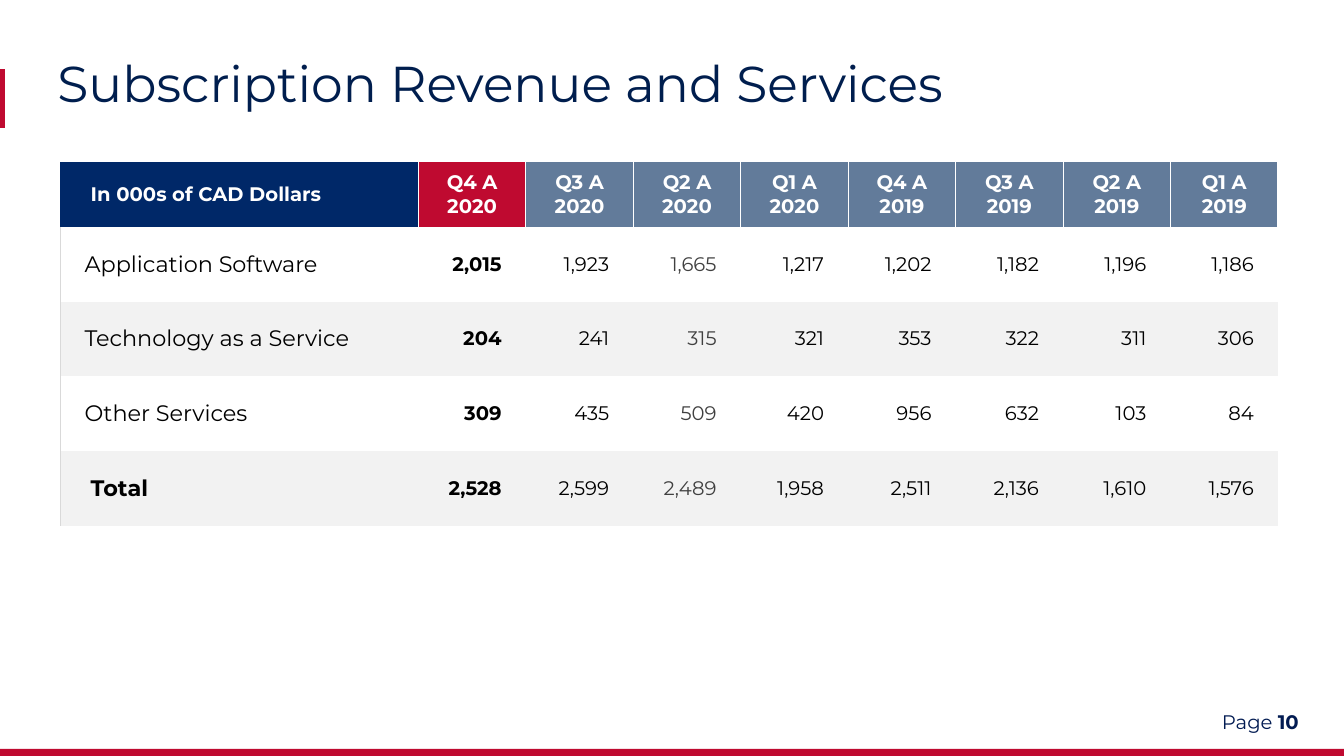
from lxml.etree import SubElement
from pptx import Presentation
from pptx.dml.color import RGBColor
from pptx.enum.shapes import MSO_CONNECTOR, MSO_SHAPE
from pptx.enum.text import MSO_ANCHOR, PP_ALIGN
from pptx.oxml.ns import qn
from pptx.util import Inches, Pt

NAVY, RED, SLATE = "002868", "BF0A30", "627B9A"
WHITE, BLACK, GRAY = "FFFFFF", "000000", "404040"
BAND, EDGE = "F2F2F2", "D9D9D9"
NO_GRID_STYLE = "{2D5ABB26-0587-4C30-8999-92F81FD0307C}"

QUARTERS = [(f"Q{quarter} A", str(year)) for year in (2020, 2019) for quarter in (4, 3, 2, 1)]
REVENUE = [
    ("Application Software", "2,015 1,923 1,665 1,217 1,202 1,182 1,196 1,186"),
    ("Technology as a Service", "204 241 315 321 353 322 311 306"),
    ("Other Services", "309 435 509 420 956 632 103 84"),
    ("Total", "2,528 2,599 2,489 1,958 2,511 2,136 1,610 1,576"),
]


def rgb(color):
    return RGBColor.from_string(color)


class SlideBuilder:
    font = "Montserrat"

    def __init__(self, slide):
        self.slide = slide

    def add_run(self, paragraph, text, size, color, bold=False):
        run = paragraph.add_run()
        run.text = text
        run.font.name = self.font
        run.font.size = Pt(size)
        run.font.bold = bold
        run.font.color.rgb = rgb(color)

    def place(self, shape, left, top, width, height):
        shape.left, shape.top = Inches(left), Inches(top)
        shape.width, shape.height = Inches(width), Inches(height)

    def title(self, text, *box):
        heading = self.slide.shapes.title
        self.place(heading, *box)
        heading.text_frame.vertical_anchor = MSO_ANCHOR.MIDDLE
        paragraph = heading.text_frame.paragraphs[0]
        paragraph.alignment = PP_ALIGN.LEFT
        paragraph.line_spacing = 0.9
        self.add_run(paragraph, text, 36, "001E4E")

    def bar(self, color, *box):
        band = self.slide.shapes.add_shape(MSO_SHAPE.RECTANGLE, *map(Inches, box))
        band.shadow.inherit = False
        band.fill.solid()
        band.fill.fore_color.rgb = rgb(color)
        band.line.fill.background()

    def line(self, color, weight, *ends):
        accent = self.slide.shapes.add_connector(MSO_CONNECTOR.STRAIGHT, *map(Inches, ends))
        accent.line.color.rgb = rgb(color)
        accent.line.width = Pt(weight)
        SubElement(accent._element.spPr, qn("a:effectLst"))

    def page_number(self, number, *box):
        frame = self.slide.shapes.add_textbox(*map(Inches, box)).text_frame
        frame.word_wrap = True
        frame.vertical_anchor = MSO_ANCHOR.MIDDLE
        paragraph = frame.paragraphs[0]
        self.add_run(paragraph, "Page ", 14, "021B52")
        self.add_run(paragraph, number, 14, "021B52", bold=True)

    def table(self, left, top, column_widths, row_heights):
        grid = self.slide.shapes.add_table(
            len(row_heights), len(column_widths), Inches(left), Inches(top),
            Inches(sum(column_widths)), Inches(sum(row_heights))).table
        grid._tbl.tblPr.find(qn("a:tableStyleId")).text = NO_GRID_STYLE
        for column, width in zip(grid.columns, column_widths):
            column.width = Inches(width)
        for row, height in zip(grid.rows, row_heights):
            row.height = Inches(height)
        return grid

    def cell(self, cell, lines, size, color, bold=False, align=PP_ALIGN.LEFT,
             margins=(0.1, 0.1), fill=None, borders=()):
        """Fill and format a cell; borders holds (side, color, points) in left, right order."""
        cell.vertical_anchor = MSO_ANCHOR.MIDDLE
        cell.margin_left, cell.margin_right = map(Inches, margins)
        for side, border_color, weight in borders:
            edge = SubElement(cell._tc.get_or_add_tcPr(), qn(f"a:ln{side}"), w=str(Pt(weight)))
            SubElement(SubElement(edge, qn("a:solidFill")), qn("a:srgbClr"), val=border_color)
        if fill:
            cell.fill.solid()
            cell.fill.fore_color.rgb = rgb(fill)
        else:
            cell.fill.background()
        frame = cell.text_frame
        for index, text in enumerate(lines):
            paragraph = frame.add_paragraph() if index else frame.paragraphs[0]
            paragraph.alignment = align
            self.add_run(paragraph, text, size, color, bold)


def add_revenue_table(builder):
    grid = builder.table(0.6, 1.61, [3.55] + [1.066] * len(QUARTERS), [0.64] + [0.742] * len(REVENUE))
    left_rule, right_rule = ("L", WHITE, 1), ("R", WHITE, 1)
    builder.cell(grid.cell(0, 0), ["In 000s of CAD Dollars"], 14, WHITE, bold=True,
                 margins=(0.3, 0.1), fill=NAVY, borders=[right_rule])
    for column, quarter in enumerate(QUARTERS, 1):
        builder.cell(grid.cell(0, column), quarter, 14, WHITE, bold=True, align=PP_ALIGN.CENTER,
                     fill=RED if column == 1 else SLATE, borders=[left_rule, right_rule])
    for row, (label, amounts) in enumerate(REVENUE, 1):
        fill = BAND if row % 2 == 0 else None
        is_total = label == "Total"
        builder.cell(grid.cell(row, 0), [label], 16, BLACK, bold=is_total,
                     margins=(0.3, 0.1) if is_total else (0.24, 0.24),
                     fill=fill, borders=[("L", EDGE, 0.5)])
        for column, amount in enumerate(amounts.split(), 1):
            builder.cell(grid.cell(row, column), [amount], 14, GRAY if column == 3 else BLACK,
                         bold=column == 1, align=PP_ALIGN.RIGHT, margins=(0.24, 0.24), fill=fill)


def main():
    presentation = Presentation()
    presentation.slide_width, presentation.slide_height = Inches(13.33), Inches(7.5)
    title_only = presentation.slide_layouts[5]
    builder = SlideBuilder(presentation.slides.add_slide(title_only))
    builder.bar(RED, 0, 7.43, 13.33, 0.07)
    builder.line(RED, 4, 0.02, 1.27, 0.02, 0.68)
    builder.title("Subscription Revenue and Services", 0.47, 0.53, 12.4, 0.65)
    builder.page_number("10", 12.02, 6.87, 1.38, 0.58)
    add_revenue_table(builder)
    presentation.save("out.pptx")


if __name__ == "__main__":
    main()
